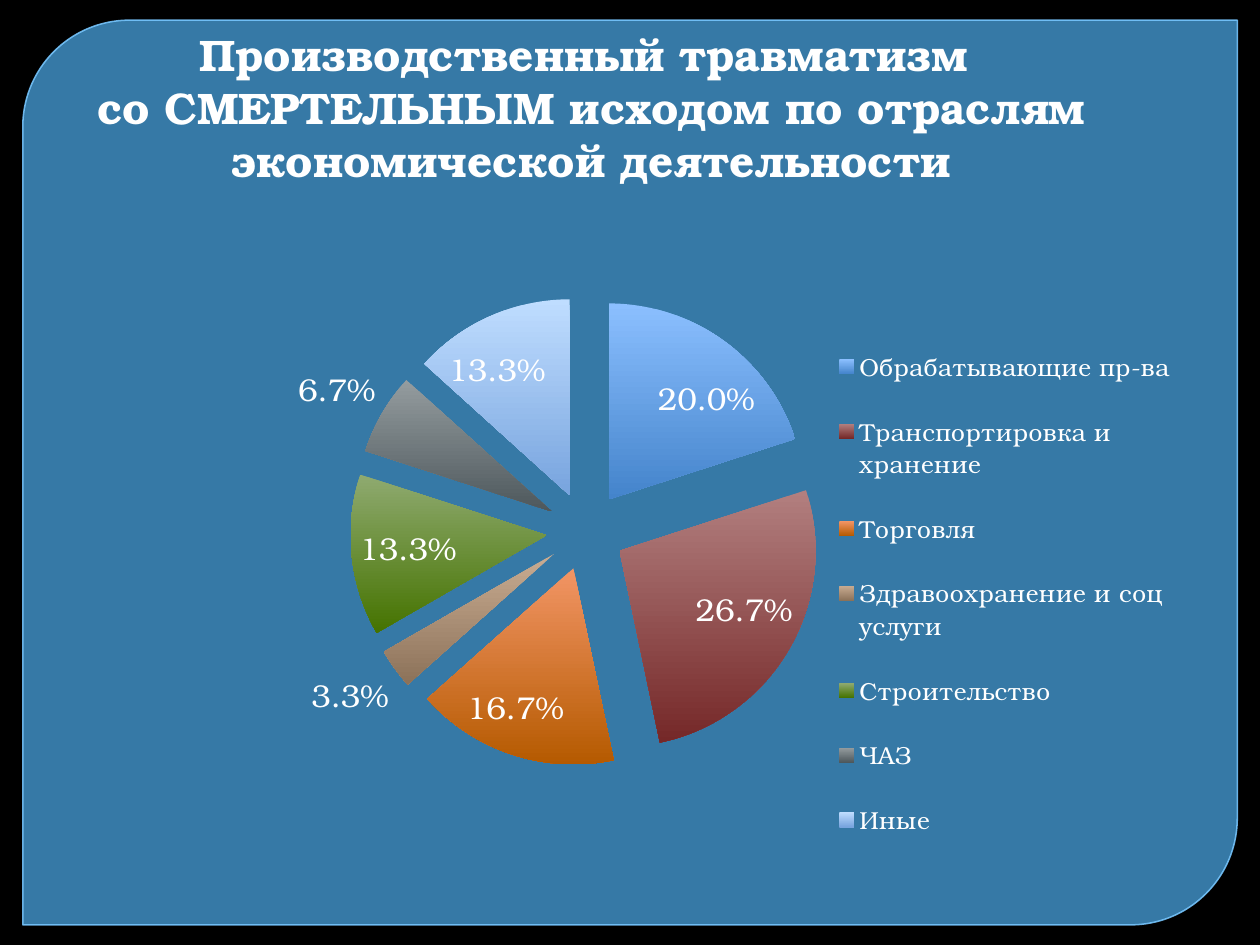
"""Builds a slide with a pie chart of fatal workplace injuries by industry."""
from dataclasses import dataclass

from lxml import etree
from pptx import Presentation
from pptx.chart.data import CategoryChartData
from pptx.dml.color import RGBColor
from pptx.enum.chart import XL_CHART_TYPE, XL_LABEL_POSITION, XL_LEGEND_POSITION
from pptx.enum.shapes import MSO_SHAPE
from pptx.enum.text import MSO_ANCHOR, MSO_AUTO_SIZE, PP_ALIGN
from pptx.oxml.ns import qn
from pptx.util import Pt

PIE = XL_CHART_TYPE.PIE_EXPLODED
BEST_FIT = XL_LABEL_POSITION.BEST_FIT
LEGEND_RIGHT = XL_LEGEND_POSITION.RIGHT
ROUNDED_DIAGONAL = MSO_SHAPE.ROUND_2_DIAG_RECTANGLE
BOTTOM = MSO_ANCHOR.BOTTOM
FIXED_SIZE = MSO_AUTO_SIZE.NONE
CENTER = PP_ALIGN.CENTER
TITLE_ONLY = 5

HEADING = "Производственный травматизм \vсо СМЕРТЕЛЬНЫМ исходом по отраслям экономической деятельности"
INDUSTRIES = [
    ("Обрабатывающие пр-ва", 0.2, "8BBFFF", "4484CB"),
    ("Транспортировка и хранение", 0.267, "B27F7F", "752828"),
    ("Торговля", 0.167, "F29565", "B55A00"),
    ("Здравоохранение и соц услуги", 0.033, "C9AC92", "8C7259"),
    ("Строительство", 0.133, "8FAA70", "457300"),
    ("ЧАЗ", 0.067, "949C9F", "4E585C"),
    ("Иные", 0.133, "BFDDFF", "78A4DE"),
]


@dataclass(frozen=True)
class Theme:
    """Colours, opacities and type of the slide."""
    font: str = "TeX Gyre Bonum"
    background: str = "000000"
    panel: str = "53BBFF"
    panel_edge: str = "78C7FF"
    panel_opacity: int = 65
    edge_opacity: int = 88
    text: str = "FFFFFF"
    title_size: float = 25.2
    label_size: float = 18
    legend_size: float = 14


def rgb(code):
    """Return the colour for a hex code."""
    return RGBColor.from_string(code)


def style_font(font, theme, size, bold=False):
    """Apply the theme's typeface and text colour to a font."""
    font.name = theme.font
    font.size = Pt(size)
    font.bold = bold
    font.color.rgb = rgb(theme.text)


def write_text(frame, text, theme, size, bold=False, align=CENTER, anchor=BOTTOM):
    """Write one formatted paragraph into a text frame."""
    frame.word_wrap = True
    frame.auto_size = FIXED_SIZE
    frame.vertical_anchor = anchor
    frame.text = text
    paragraph = frame.paragraphs[0]
    paragraph.alignment = align
    for run in paragraph.runs:
        style_font(run.font, theme, size, bold)


def manual_layout(x, y, w, h, inner=False):
    """Return a chart layout element given as fractions of the chart."""
    layout = etree.Element(qn("c:layout"))
    manual = etree.SubElement(layout, qn("c:manualLayout"))
    settings = {"layoutTarget": "inner"} if inner else {}
    settings |= {"xMode": "edge", "yMode": "edge", "x": x, "y": y, "w": w, "h": h}
    for name, value in settings.items():
        etree.SubElement(manual, qn(f"c:{name}"), val=str(value))
    return layout


class SlideBuilder:
    """Holds the theme and the current slide."""

    def __init__(self, slide, theme):
        """Start on a slide with the theme's background."""
        self.slide = slide
        self.theme = theme
        slide.background.fill.solid()
        slide.background.fill.fore_color.rgb = rgb(theme.background)

    def panel(self, left, top, width, height):
        """Place the translucent panel behind everything else."""
        theme = self.theme
        panel = self.slide.shapes.add_shape(
            ROUNDED_DIAGONAL, Pt(left), Pt(top), Pt(width), Pt(height))
        panel.adjustments[0] = 0.118
        panel.adjustments[1] = 0
        panel.shadow.inherit = False
        panel.fill.solid()
        panel.fill.fore_color.rgb = rgb(theme.panel)
        panel.line.color.rgb = rgb(theme.panel_edge)
        panel.line.width = Pt(0.87)
        colors = panel._element.spPr.iter(qn("a:srgbClr"))
        for color, opacity in zip(colors, (theme.panel_opacity, theme.edge_opacity)):
            etree.SubElement(color, qn("a:alpha"), val=str(opacity * 1000))
        self.slide.shapes._spTree.insert(2, panel._element)

    def title(self, text, left, top, width, height):
        """Move and fill the title placeholder."""
        heading = self.slide.shapes.title
        heading.left, heading.top = Pt(left), Pt(top)
        heading.width, heading.height = Pt(width), Pt(height)
        write_text(heading.text_frame, text, self.theme, self.theme.title_size, bold=True)

    def pie(self, industries, left, top, width, height):
        """Add the exploded pie with gradient slices and a legend."""
        names, shares, lights, darks = zip(*industries)
        data = CategoryChartData(number_format="0.0%")
        data.categories = names
        data.add_series("Series 1", shares)
        chart = self.slide.shapes.add_chart(
            PIE, Pt(left), Pt(top), Pt(width), Pt(height), data).chart
        chart.has_title = False
        style_font(chart.font, self.theme, self.theme.label_size)
        self.place_plot(chart)
        self.color_slices(chart.plots[0], zip(lights, darks))
        self.label_slices(chart.plots[0])
        self.legend(chart)

    def place_plot(self, chart):
        """Fix the plot area inside the chart."""
        area = chart._chartSpace.chart.plotArea
        for layout in area.findall(qn("c:layout")):
            area.remove(layout)
        area.insert(0, manual_layout(0.202, 0.034, 0.524, 0.753, inner=True))

    def color_slices(self, plot, shades):
        """Pull the slices apart and shade each from light to dark."""
        plot.vary_by_categories = True
        series = plot.series[0]
        for explosion in series._element.findall(qn("c:explosion")):
            series._element.remove(explosion)
        explosion = etree.Element(qn("c:explosion"), val="20")
        series._element.find(qn("c:tx")).addnext(explosion)
        for index, shade in enumerate(shades):
            slice_format = series.points[index].format
            slice_format.line.fill.background()
            slice_format.fill.gradient()
            slice_format.fill.gradient_angle = 270
            for stop, color in zip(slice_format.fill.gradient_stops, shade):
                stop.color.rgb = rgb(color)

    def label_slices(self, plot):
        """Show each slice's share."""
        labels = plot.series[0].data_labels
        labels.show_value = True
        labels.show_percentage = False
        labels.number_format = "0.0%"
        labels.number_format_is_linked = False
        labels.position = BEST_FIT
        style_font(labels.font, self.theme, self.theme.label_size)

    def legend(self, chart):
        """Place the legend to the right of the pie."""
        chart.has_legend = True
        legend = chart.legend
        legend.position = LEGEND_RIGHT
        legend.include_in_layout = False
        style_font(legend.font, self.theme, self.theme.legend_size)
        for layout in legend._element.findall(qn("c:layout")):
            legend._element.remove(layout)
        position = legend._element.find(qn("c:legendPos"))
        position.addnext(manual_layout(0.67, 0.07, 0.32, 0.88))


def main():
    """Build and save the presentation."""
    deck = Presentation()
    deck.slide_width, deck.slide_height = Pt(720), Pt(540)
    builder = SlideBuilder(deck.slides.add_slide(deck.slide_layouts[TITLE_ONLY]), Theme())
    builder.panel(13, 11.5, 694, 517)
    builder.title(HEADING, 2, 16, 672, 94)
    builder.pie(INDUSTRIES, 31, 157, 654.5, 357)
    deck.save("out.pptx")


if __name__ == "__main__":
    main()
